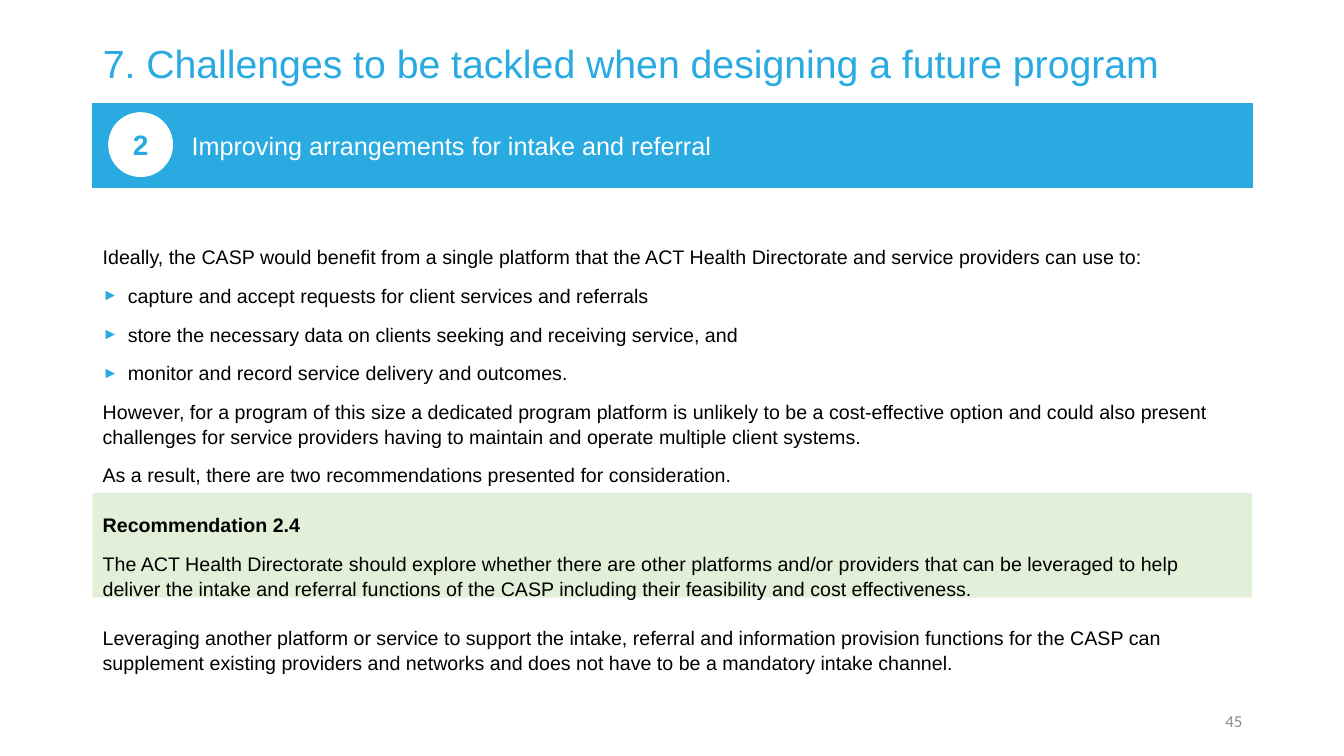
from pptx import Presentation
from pptx.util import Inches, Pt
from pptx.dml.color import RGBColor
from pptx.enum.shapes import MSO_SHAPE as Shape
from pptx.enum.text import MSO_ANCHOR as Anchor, PP_ALIGN as Align
from lxml.etree import SubElement
from pptx.oxml.ns import qn

BLUE = RGBColor(0x29, 0xAA, 0xE1)
GREEN = RGBColor(0xE2, 0xF0, 0xD9)
WHITE = RGBColor(0xFF, 0xFF, 0xFF)
BLACK = RGBColor(0x00, 0x00, 0x00)
GREY = RGBColor(0x8C, 0x8C, 0x8C)

LEFT, WIDE = Inches(0.92), Inches(11.5)


def write(frame, text, size=14, color=BLACK, bold=False, face="Arial",
          align=Align.LEFT, anchor=Anchor.MIDDLE, before=0, line=1.0,
          bullet=False, new=False):
    frame.word_wrap = True
    frame.vertical_anchor = anchor
    para = frame.add_paragraph() if new else frame.paragraphs[0]
    if bullet:
        props = para._p.get_or_add_pPr()
        props.set("marL", str(Inches(0.25)))
        props.set("indent", str(-Inches(0.25)))
    para.alignment = align
    para.space_before = Pt(before)
    para.line_spacing = line
    if bullet:
        tint = SubElement(props, qn("a:buClr"))
        SubElement(tint, qn("a:srgbClr")).set("val", str(BLUE))
        SubElement(props, qn("a:buSzPct")).set("val", "80000")
        SubElement(props, qn("a:buFont")).set("typeface", "Arial")
        SubElement(props, qn("a:buChar")).set("char", "►")
    run = para.add_run()
    run.text = text
    font = run.font
    font.name, font.size, font.bold = face, Pt(size), bold
    font.color.rgb = color


def block(kind, left, top, wide, high, fill):
    item = slide.shapes.add_shape(kind, left, top, wide, high)
    item.shadow.inherit = False
    item.fill.solid()
    item.fill.fore_color.rgb = fill
    item.line.color.rgb = fill
    item.line.width = Pt(1)
    return item


deck = Presentation()
deck.slide_width, deck.slide_height = Inches(13.33), Inches(7.5)
slide = deck.slides.add_slide(deck.slide_layouts[5])

# Green panel behind the recommendation
panel = block(Shape.RECTANGLE, LEFT, Inches(4.89), WIDE, Inches(1.04), GREEN)
panel.line.fill.background()

# Title
title = slide.shapes.title
title.left, title.top = LEFT, Inches(0.4)
title.width, title.height = WIDE, Inches(0.51)
write(title.text_frame,
      "7. Challenges to be tackled when designing a future program",
      size=28, color=BLUE, line=0.9)

# Blue banner with its number
banner = block(Shape.RECTANGLE, LEFT, Inches(1.03), WIDE, Inches(0.83), BLUE)
banner.text_frame.margin_left = Inches(0.98)
write(banner.text_frame, "Improving arrangements for intake and referral",
      size=18, color=WHITE)
badge = block(Shape.OVAL, Inches(1.08), Inches(1.12),
              Inches(0.63), Inches(0.63), WHITE)
write(badge.text_frame, "2", size=20, color=BLUE, bold=True,
      align=Align.CENTER)

# Body text: wording and what differs from a plain paragraph
BODY = [
    ("Ideally, the CASP would benefit from a single platform that the ACT "
     "Health Directorate and service providers can use to:", {"before": 0}),
    ("capture and accept requests for client services and referrals",
     {"bullet": True}),
    ("store the necessary data on clients seeking and receiving service, and",
     {"bullet": True}),
    ("monitor and record service delivery and outcomes.", {"bullet": True}),
    ("However, for a program of this size a dedicated program platform is "
     "unlikely to be a cost-effective option and could also present "
     "challenges for service providers having to maintain and operate "
     "multiple client systems.", {}),
    ("As a result, there are two recommendations presented for "
     "consideration.", {}),
    ("Recommendation 2.4", {"before": 18, "bold": True}),
    ("The ACT Health Directorate should explore whether there are other "
     "platforms and/or providers that can be leveraged to help deliver the "
     "intake and referral functions of the CASP including their feasibility "
     "and cost effectiveness.", {}),
    ("Leveraging another platform or service to support the intake, referral "
     "and information provision functions for the CASP can supplement "
     "existing providers and networks and does not have to be a mandatory "
     "intake channel.", {"before": 18}),
]
body = slide.shapes.add_textbox(LEFT, Inches(2.37), WIDE, Inches(4.39))
for row, (text, look) in enumerate(BODY):
    style = {"before": 10, "line": 1.05, "anchor": Anchor.TOP} | look
    write(body.text_frame, text, new=row > 0, **style)

# Page number
page = slide.shapes.add_textbox(Inches(9.42), Inches(6.95),
                                Inches(3), Inches(0.4))
write(page.text_frame, "45", size=12, color=GREY, face="Calibri",
      align=Align.RIGHT)

deck.save("out.pptx")
